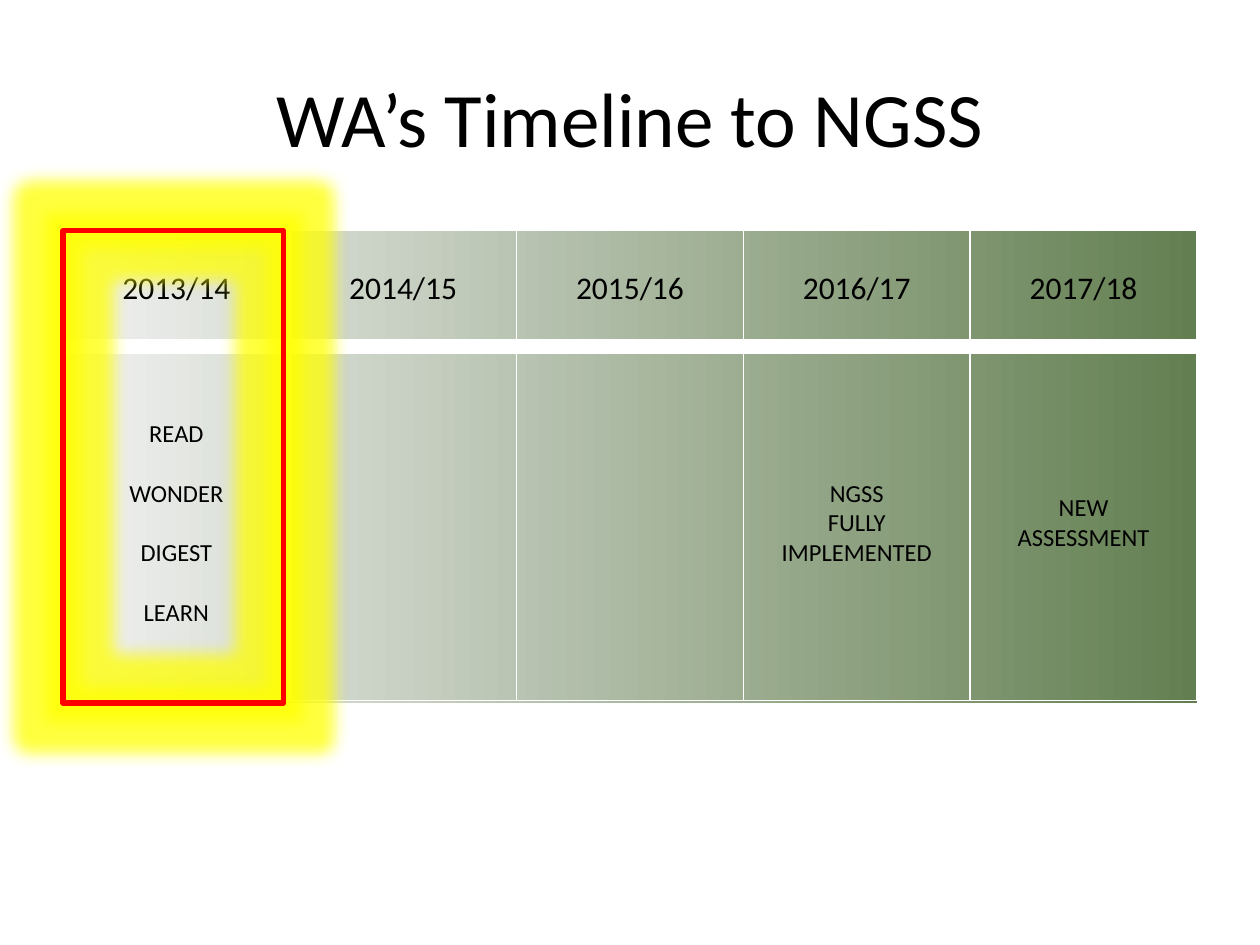
from pptx import Presentation
from pptx.dml.color import RGBColor as RGB
from pptx.enum.shapes import MSO_SHAPE as SHAPE
from pptx.enum.text import MSO_ANCHOR as ANCHOR, PP_ALIGN as ALIGN
from pptx.oxml import parse_xml as to_xml
from pptx.oxml.ns import nsdecls
from pptx.util import Inches, Pt

BLACK = RGB(0x00, 0x00, 0x00)
WHITE = RGB(0xFF, 0xFF, 0xFF)
PALE = RGB(0xF2, 0xF2, 0xF2)
GREEN = RGB(0x63, 0x7F, 0x51)
RED = RGB(0xFF, 0x00, 0x00)
YELLOW = RGB(0xFF, 0xFF, 0x00)

YEARS = ["2013/14", "2014/15", "2015/16", "2016/17", "2017/18"]
STEPS = ["READ\nWONDER\nDIGEST\nLEARN", "", "",
         "NGSS\nFULLY\nIMPLEMENTED", "NEW\nASSESSMENT"]
LEFT, TOP, WIDE, HIGH = 0.05, 0.244, 0.9, 0.5
HEADS, BODY = 0.92, 2.81
THIN, THICK = 1, 10


def write(frame, text, size, font="Calibri", color=BLACK, gap=0):
    frame.text = text
    for i, para in enumerate(frame.paragraphs):
        para.alignment = ALIGN.CENTER
        para.space_before = Pt(gap if i else 0)
        para.font.size = Pt(size)
        for run in para.runs:
            run.font.size = Pt(size)
            run.font.name = font
            run.font.color.rgb = color


class Deck:
    """Hold the style and the current slide, with lengths as shares of its size."""

    def __init__(self):
        self.show = Presentation()
        self.show.slide_width, self.show.slide_height = Inches(10), Inches(7.5)
        self.slide = self.show.slides.add_slide(self.show.slide_layouts[5])

    def place(self, x, y, w, h):
        wide, high = self.show.slide_width, self.show.slide_height
        return int(x * wide), int(y * high), int(w * wide), int(h * high)

    def title(self, text, *box):
        head = self.slide.shapes.title
        head.left, head.top, head.width, head.height = self.place(*box)
        frame = head.text_frame
        frame.vertical_anchor = ANCHOR.MIDDLE
        write(frame, text, 44)

    def rect(self, *box):
        shape = self.slide.shapes.add_shape(SHAPE.RECTANGLE, *self.place(*box))
        shape.shadow.inherit = False
        return shape

    def band(self, start, end, *box):
        shape = self.rect(*box)
        shape.line.fill.background()
        shape.fill.gradient()
        shape.fill.gradient_angle = 0
        for stop, color, pos in zip(shape.fill.gradient_stops, (start, end), (0, 1)):
            stop.color.rgb, stop.position = color, pos

    def mark(self, color, glow, *box):
        shape = self.rect(*box)
        shape.fill.background()
        shape.line.color.rgb = color
        shape.line.width = Pt(3)
        effect = shape._element.spPr.find("{*}effectLst")
        effect.append(to_xml(
            f'<a:glow {nsdecls("a")} rad="{Pt(18)}"><a:srgbClr val="{glow}">'
            '<a:alpha val="75000"/></a:srgbClr></a:glow>'))

    def edge(self, cell, **widths):
        props = cell._tc.get_or_add_tcPr()
        for side, width in widths.items():
            props.append(to_xml(
                f'<a:ln{side} {nsdecls("a")} w="{Pt(width)}"><a:solidFill>'
                f'<a:srgbClr val="{WHITE}"/></a:solidFill></a:ln{side}>'))

    def table(self, rows, highs, sizes, *box):
        frame = self.slide.shapes.add_table(len(rows), len(rows[0]), *self.place(*box))
        grid = frame.table
        grid.first_row = grid.horz_banding = False
        for r, (texts, high, size) in enumerate(zip(rows, highs, sizes)):
            grid.rows[r].height = Inches(high)
            for c, text in enumerate(texts):
                cell = grid.cell(r, c)
                self.edge(cell, L=THIN, R=THIN, T=THICK if r else THIN,
                          B=THIN if r else THICK)
                cell.fill.background()
                cell.vertical_anchor = ANCHOR.MIDDLE
                cell.margin_left = cell.margin_right = Inches(0.06)
                cell.margin_top = cell.margin_bottom = Inches(0.06)
                write(cell.text_frame, text, size, gap=17 if r and c == 0 else 0)


def main():
    deck = Deck()
    deck.band(PALE, GREEN, LEFT, TOP, WIDE, HIGH)
    deck.title("WA’s Timeline to NGSS", LEFT, 0.04, WIDE, 1 / 6)
    deck.table([YEARS, STEPS], [HEADS, BODY], [18, 14],
               LEFT, TOP, WIDE, (HEADS + BODY) / 7.5)
    deck.mark(RED, YELLOW, LEFT, TOP, 0.175, HIGH)
    deck.show.save("out.pptx")


if __name__ == "__main__":
    main()
